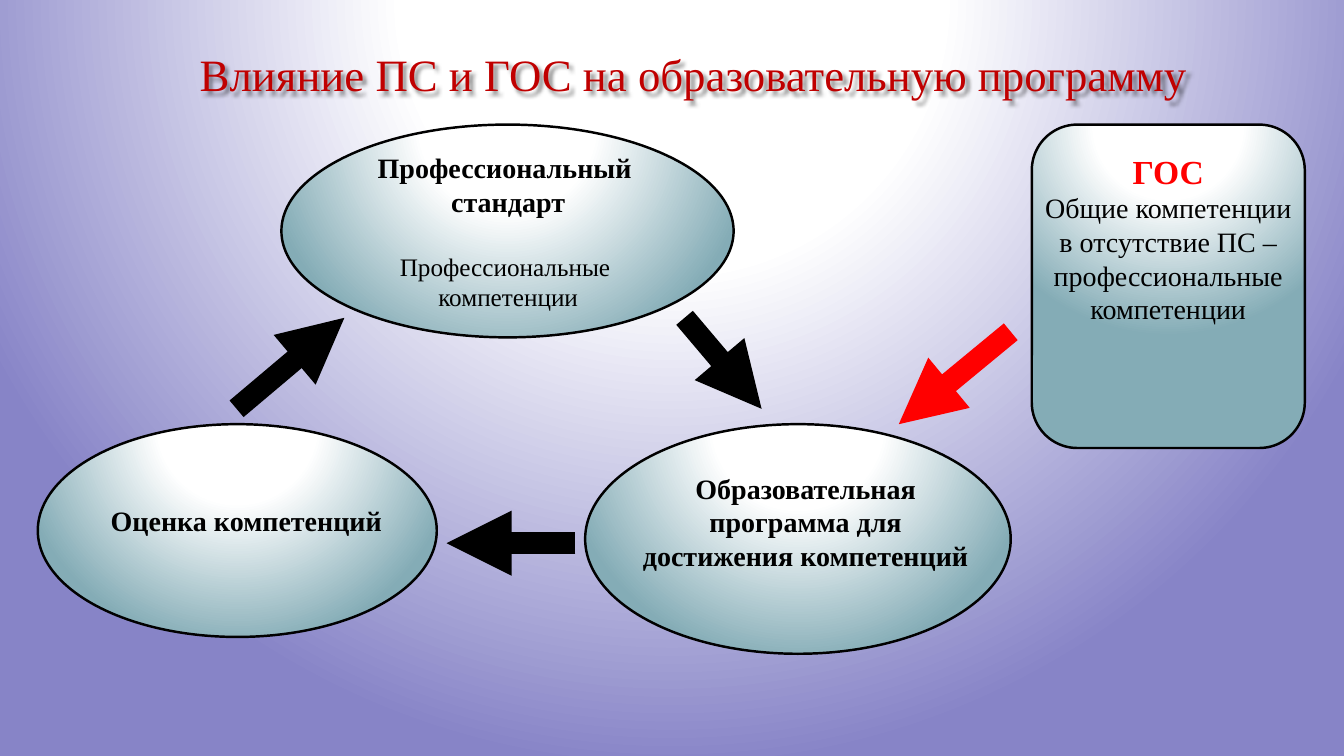
from dataclasses import dataclass

from pptx import Presentation
from pptx.dml.color import RGBColor
from pptx.enum.shapes import MSO_CONNECTOR, MSO_SHAPE
from pptx.enum.text import MSO_ANCHOR, MSO_AUTO_SIZE, PP_ALIGN
from pptx.oxml import parse_xml
from pptx.oxml.ns import nsdecls, qn
from pptx.util import Pt


@dataclass(frozen=True)
class Theme:
    face: str = "Times New Roman"
    black: str = "000000"
    red: str = "FF0000"
    wine: str = "C00000"
    white: str = "FFFFFF"
    teal: str = "84ACB6"
    violet: str = "8784C7"
    title: int = 32
    large: int = 24
    body: int = 20
    small: int = 18
    edge: float = 1.75
    shaft: float = 15.5


theme = Theme()
MAIN = {"size": Pt(theme.body), "bold": True}
BODY = {"size": Pt(theme.body), "bold": False}
NOTE = {"size": Pt(theme.small), "bold": False}
HEAD = {"size": Pt(theme.large), "bold": True}
WRAP = {"word_wrap": True, "auto_size": MSO_AUTO_SIZE.NONE, "vertical_anchor": MSO_ANCHOR.TOP}


def style(item, form):
    for key, value in form.items():
        setattr(item, key, value)


def xml(text):
    return parse_xml(text.replace(">", f" {nsdecls('a')}>", 1))


def glow(fill, owner, tone):
    fill.gradient()
    node = next(owner.iter(qn("a:gradFill")))
    node.clear()
    node.set("rotWithShape", "1")
    stops = "".join(
        f'<a:gs pos="{pos * 1000}"><a:srgbClr val="{color}"/></a:gs>'
        for pos, color in ((0, theme.white), (35, theme.white), (100, tone))
    )
    node.append(xml(f"<a:gsLst>{stops}</a:gsLst>"))
    node.append(xml(
        '<a:path path="circle"><a:fillToRect l="50000" t="-80000" r="50000" b="180000"/></a:path>'
    ))


def write(frame, lines, align=PP_ALIGN.CENTER):
    style(frame, WRAP)
    for index, (text, form, color, gap) in enumerate(lines):
        para = frame.add_paragraph() if index else frame.paragraphs[0]
        style(para, {"alignment": align, "space_before": Pt(gap)})
        run = para.add_run()
        run.text = text
        style(run.font, {"name": theme.face, **form})
        run.font.color.rgb = RGBColor.from_string(color)


def head(slide, box, text):
    title = slide.shapes.title
    style(title, dict(zip(("left", "top", "width", "height"), map(Pt, box))))
    write(title.text_frame, [(text, {"size": Pt(theme.title), "bold": False}, theme.wine, 0)])
    title.text_frame.word_wrap = False
    title._element.spPr.append(xml(
        '<a:effectLst><a:outerShdw blurRad="38100" dist="38100" dir="2700000" algn="tl">'
        '<a:srgbClr val="000000"><a:alpha val="43000"/></a:srgbClr></a:outerShdw></a:effectLst>'
    ))


def node(slide, kind, box, inset, lines, align=PP_ALIGN.CENTER):
    shape = slide.shapes.add_shape(kind, *map(Pt, box))
    shape.shadow.inherit = False
    glow(shape.fill, shape._element, theme.teal)
    shape.line.color.rgb = RGBColor.from_string(theme.black)
    shape.line.width = Pt(theme.edge)
    left, top, width, height = box
    dx, dy, wide, high = inset
    label = slide.shapes.add_textbox(Pt(left + dx), Pt(top + dy), Pt(wide), Pt(high))
    write(label.text_frame, lines, align)


def arrow(slide, ends, color):
    line = slide.shapes.add_connector(MSO_CONNECTOR.STRAIGHT, *map(Pt, ends))
    line.line.color.rgb = RGBColor.from_string(color)
    line.line.width = Pt(theme.shaft)
    line.line._get_or_add_ln().append(xml('<a:tailEnd type="triangle"></a:tailEnd>'))
    line._element.spPr.append(xml("<a:effectLst></a:effectLst>"))


def cycle(slide):
    oval = MSO_SHAPE.OVAL
    black = theme.black
    node(slide, oval, (201, 89, 323, 152), (20, 15, 284, 124), [
        ("Профессиональный ", MAIN, black, 0),
        ("стандарт", MAIN, black, 0),
        ("Профессиональные ", NOTE, black, 24),
        ("компетенции", NOTE, black, 0),
    ])
    node(slide, oval, (27, 303, 285, 152), (45, 53, 224, 32),
         [("Оценка компетенций", MAIN, black, 0)], PP_ALIGN.LEFT)
    node(slide, oval, (418, 303, 304, 164), (30, 30, 255, 80),
         [("Образовательная программа для достижения компетенций", MAIN, black, 0)])
    node(slide, MSO_SHAPE.ROUNDED_RECTANGLE, (737, 89, 195, 231), (0, 15, 195, 133), [
        ("ГОС", HEAD, theme.red, 0),
        ("Общие компетенции в отсутствие ПС – профессиональные компетенции", BODY, black, 0),
    ])
    for ends, color in (
        ((169, 292, 246, 227), black),
        ((489, 227, 544, 292), black),
        ((411, 388, 319, 388), black),
        ((722, 237, 642, 303), theme.red),
    ):
        arrow(slide, ends, color)


def main():
    deck = Presentation()
    style(deck, {"slide_width": Pt(960), "slide_height": Pt(540)})
    slide = deck.slides.add_slide(deck.slide_layouts[5])
    glow(slide.background.fill, slide._element, theme.violet)
    head(slide, (132, 30, 735, 46), "Влияние ПС и ГОС на образовательную программу ")
    cycle(slide)
    deck.save("out.pptx")


if __name__ == "__main__":
    main()
